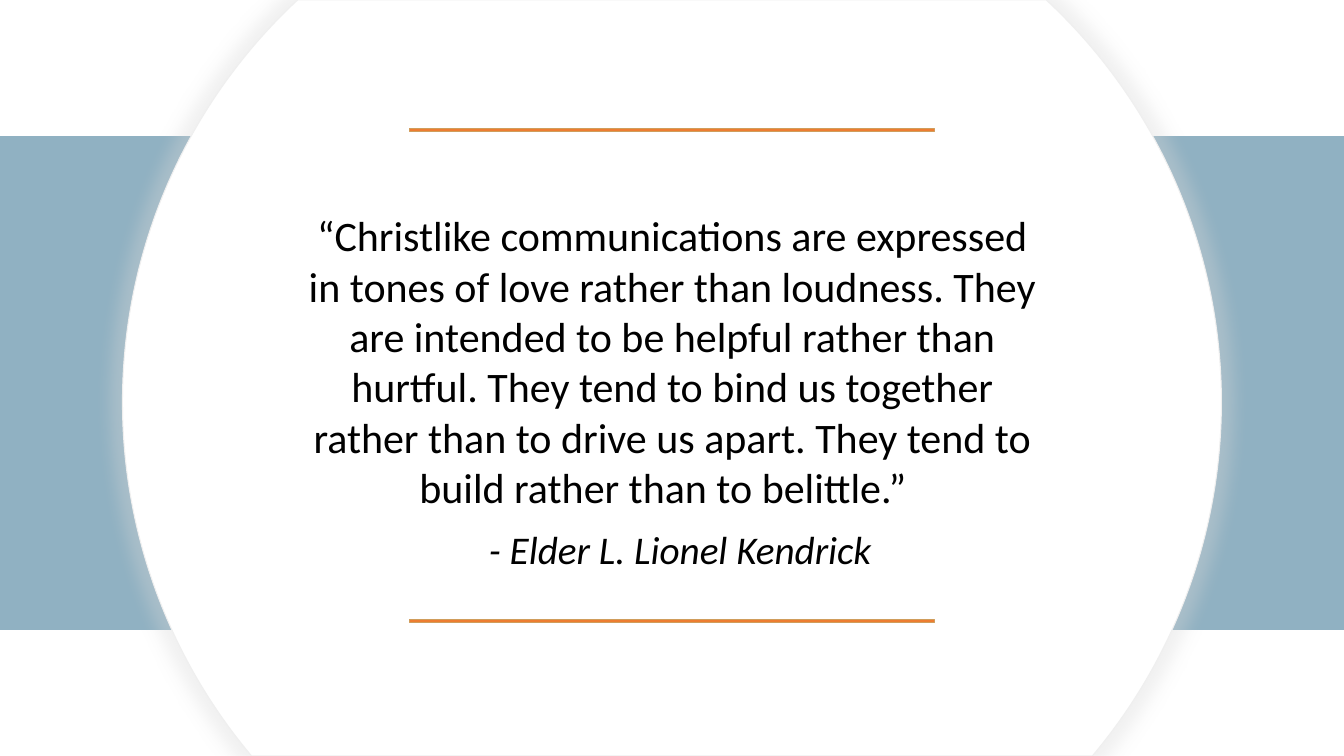
from dataclasses import dataclass
from math import asin, cos, pi, sin, tan

from lxml.etree import SubElement
from pptx import Presentation
from pptx.dml.color import RGBColor
from pptx.enum.shapes import MSO_SHAPE as Shape
from pptx.enum.text import MSO_AUTO_SIZE as AutoSize, PP_ALIGN as Align
from pptx.oxml.ns import qn
from pptx.util import Inches, Pt

PAGE_WIDTH, PAGE_HEIGHT = 13.33, 7.5
QUOTE = (
    "“Christlike communications are expressed in tones of love rather than loudness. "
    "They are intended to be helpful rather than hurtful. They tend to bind us together "
    "rather than to drive us apart. They tend to build rather than to belittle.”  "
)
SPEAKER = "- Elder L. Lionel Kendrick"


@dataclass(frozen=True)
class Theme:
    """Colours, font and sizes of the quote page."""

    band: str = "90B1C2"
    disc: str = "FFFFFF"
    disc_edge: str = "EFEFEF"
    glow: str = "D8D8D8"
    rule: str = "ED7D31"
    rule_edge: str = "D09D5C"
    ink: str = "000000"
    font: str = "Calibri"
    quote_size: int = 30
    speaker_size: int = 28
    edge_width: float = 0.75


class QuotePage:
    """Draws styled elements on one page."""

    def __init__(self, page, theme):
        """Keep the page and its theme."""
        self.page = page
        self.theme = theme

    def paint(self, shape, fill, edge):
        """Give a shape its fill and outline, without a shadow."""
        shape.shadow.inherit = False
        shape.fill.solid()
        shape.fill.fore_color.rgb = RGBColor.from_string(fill)
        shape.line.color.rgb = RGBColor.from_string(edge)
        shape.line.width = Pt(self.theme.edge_width)

    def bar(self, top, width, height, fill, edge):
        """Add a filled rectangle centred across the page."""
        place = map(Inches, ((PAGE_WIDTH - width) / 2, top, width, height))
        self.paint(self.page.shapes.add_shape(Shape.RECTANGLE, *place), fill, edge)

    def disc(self, center_x, center_y, radius):
        """Add a glowing disc cut off by the top and bottom of the page."""

        def spot(angle, slide=0):
            """Find a point on the rim, moved along its tangent."""
            return (
                Inches(center_x + radius * (cos(angle) - slide * sin(angle))),
                Inches(center_y + radius * (sin(angle) + slide * cos(angle))),
            )

        def curve(start, end):
            """Give two handles and the end of a rim curve."""
            reach = 4 / 3 * tan((end - start) / 4)
            return [spot(start, reach), spot(end, -reach), spot(end)]

        top = -asin(center_y / radius)
        bottom = asin((PAGE_HEIGHT - center_y) / radius)
        right_side = curve(top, 0) + curve(0, bottom)
        left_side = curve(pi - bottom, pi) + curve(pi, pi - top)
        builder = self.page.shapes.build_freeform(*spot(top))
        builder.add_line_segments(right_side + [spot(pi - bottom)] + left_side, close=True)
        shape = builder.convert_to_shape()
        self.round_off(shape, first_handles=(0, 3, 7, 10))
        self.paint(shape, self.theme.disc, self.theme.disc_edge)
        self.glow(shape, blur=11, opacity=36, scale=102)

    def round_off(self, shape, first_handles):
        """Turn each named group of three segments into one curve."""
        outline = next(shape.element.iter(qn("a:path")))
        segments = outline.findall(qn("a:lnTo"))
        for first in first_handles:
            bend = SubElement(outline, qn("a:cubicBezTo"))
            segments[first].addprevious(bend)
            for segment in segments[first:first + 3]:
                bend.append(segment[0])
                outline.remove(segment)

    def glow(self, shape, blur, opacity, scale):
        """Put a soft, centred shadow around a shape."""
        effects = shape.element.spPr.find(qn("a:effectLst"))
        size = str(scale * 1000)
        shadow = SubElement(
            effects, qn("a:outerShdw"), blurRad=str(Pt(blur)), sx=size, sy=size,
            algn="ctr", rotWithShape="0",
        )
        color = SubElement(shadow, qn("a:srgbClr"), val=self.theme.glow)
        SubElement(color, qn("a:alpha"), val=str(opacity * 1000))

    def text(self, left, top, width, height, words, size, margin, align, italic=False):
        """Add a wrapped text box with one paragraph."""
        box = self.page.shapes.add_textbox(*map(Inches, (left, top, width, height)))
        frame = box.text_frame
        frame.word_wrap = True
        frame.auto_size = AutoSize.SHAPE_TO_FIT_TEXT
        frame.margin_top = frame.margin_bottom = Inches(margin)
        para = frame.paragraphs[0]
        para.text = words
        para.alignment = align
        para.font.name = self.theme.font
        para.font.size = Pt(size)
        para.font.italic = italic
        para.font.color.rgb = RGBColor.from_string(self.theme.ink)


def main():
    """Build and save the deck."""
    deck = Presentation()
    deck.slide_width, deck.slide_height = Inches(PAGE_WIDTH), Inches(PAGE_HEIGHT)
    theme = Theme()
    page = QuotePage(deck.slides.add_slide(deck.slide_layouts[6]), theme)

    page.bar(1.35, PAGE_WIDTH, 4.9, theme.band, theme.band)
    page.disc(PAGE_WIDTH / 2, 3.99, 5.45)
    for top in (1.28, 6.15):
        page.bar(top, 5.2, 0.03, theme.rule, theme.rule_edge)
    page.text(2.94, 1.98, 7.46, 3.23, QUOTE, theme.quote_size, 0.1, Align.CENTER)
    page.text(4.75, 5.16, 4.34, 0.57, SPEAKER, theme.speaker_size, 0.05, Align.LEFT, True)

    deck.save("out.pptx")


if __name__ == "__main__":
    main()
